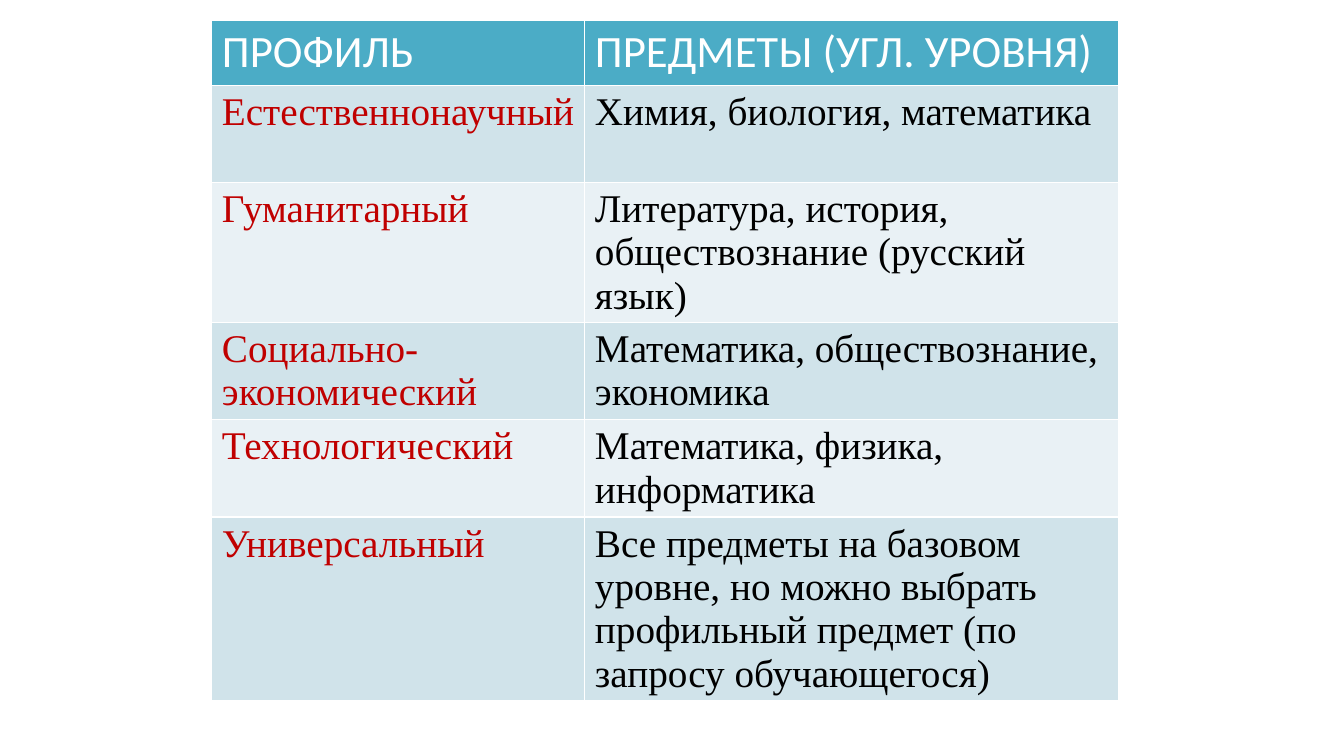
import pptx
import pptx.dml.color
import pptx.util

Cm = pptx.util.Cm

THEME = {
    "header": {"size": 32, "name": "Calibri", "colors": ("FFFFFF", "FFFFFF")},
    "body": {"size": 28, "name": "Times New Roman", "colors": ("C00000", "000000")},
    "header_fill": "4BACC6",
    "band_fills": ("E9F1F5", "D0E3EA"),
}

PROFILES = [
    (1.62, "ПРОФИЛЬ", "ПРЕДМЕТЫ (УГЛ. УРОВНЯ)"),
    (2.45, "Естественнонаучный", "Химия, биология, математика"),
    (3.53, "Гуманитарный", "Литература, история, обществознание (русский язык)"),
    (2.45, "Социально-экономический", "Математика, обществознание, экономика"),
    (2.45, "Технологический", "Математика, физика, информатика"),
    (4.63, "Универсальный", "Все предметы на базовом уровне, но можно выбрать "
                            "профильный предмет (по запросу обучающегося)"),
]
COLUMN_WIDTHS = (9.4, 13.46)

deck = pptx.Presentation()
deck.slide_width = Cm(33.87)
deck.slide_height = Cm(19.05)
page = deck.slides.add_slide(deck.slide_layouts[6])

table = page.shapes.add_table(
    len(PROFILES), len(COLUMN_WIDTHS), Cm(5.34), Cm(0.51),
    Cm(sum(COLUMN_WIDTHS)), Cm(sum(profile[0] for profile in PROFILES)),
).table

for column, width in zip(table.columns, COLUMN_WIDTHS):
    column.width = Cm(width)

for row_index, (height, *texts) in enumerate(PROFILES):
    table.rows[row_index].height = Cm(height)
    style = THEME["body"] if row_index else THEME["header"]
    fill = THEME["band_fills"][row_index % 2] if row_index else THEME["header_fill"]
    for column_index, text in enumerate(texts):
        cell = table.cell(row_index, column_index)
        cell.fill.solid()
        cell.fill.fore_color.rgb = pptx.dml.color.RGBColor.from_string(fill)
        span = cell.text_frame.paragraphs[0].add_run()
        span.text = text
        formats = {"size": pptx.util.Pt(style["size"]), "name": style["name"], "bold": False}
        for attribute, value in formats.items():
            setattr(span.font, attribute, value)
        span.font.color.rgb = pptx.dml.color.RGBColor.from_string(style["colors"][column_index])

deck.save("out.pptx")
